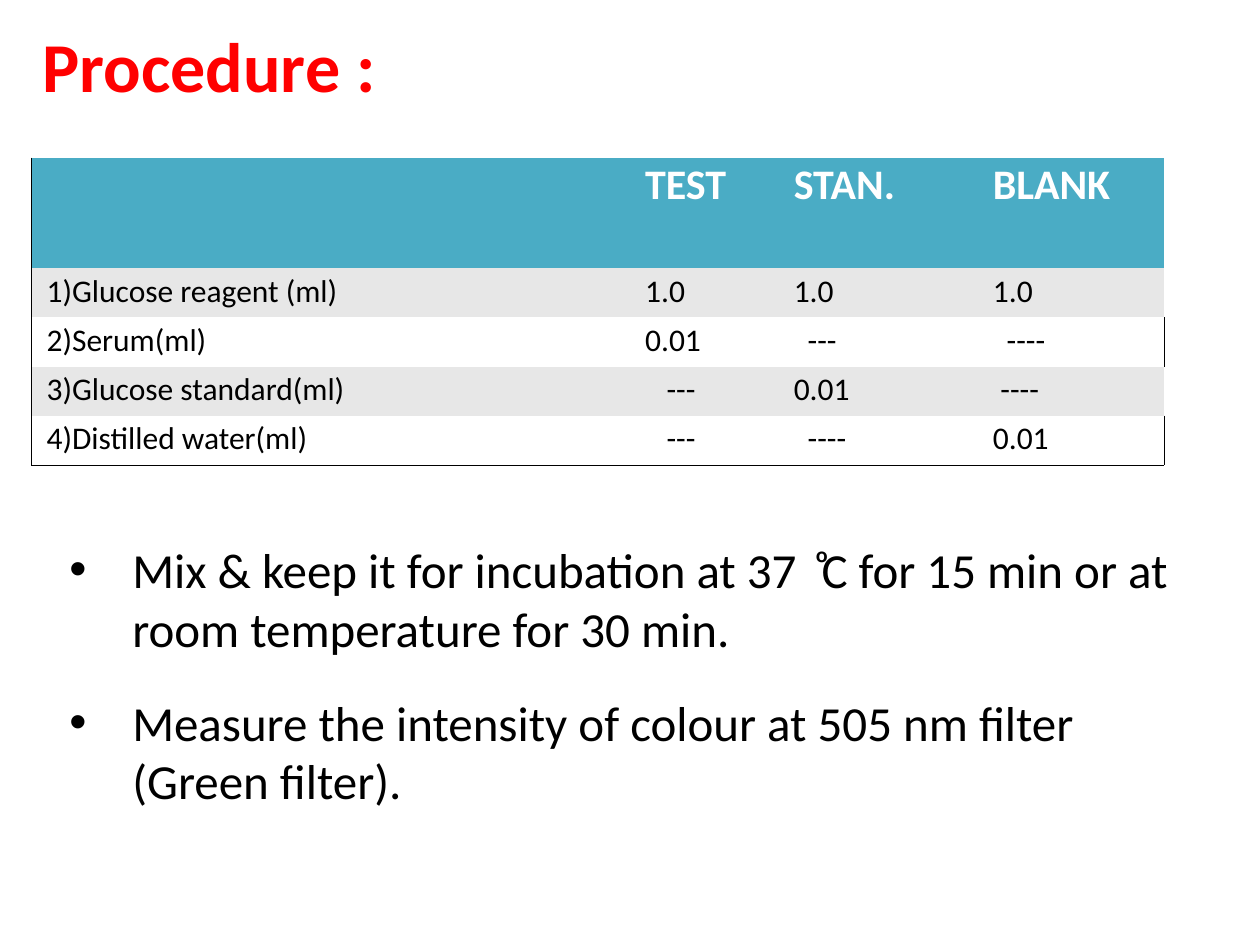
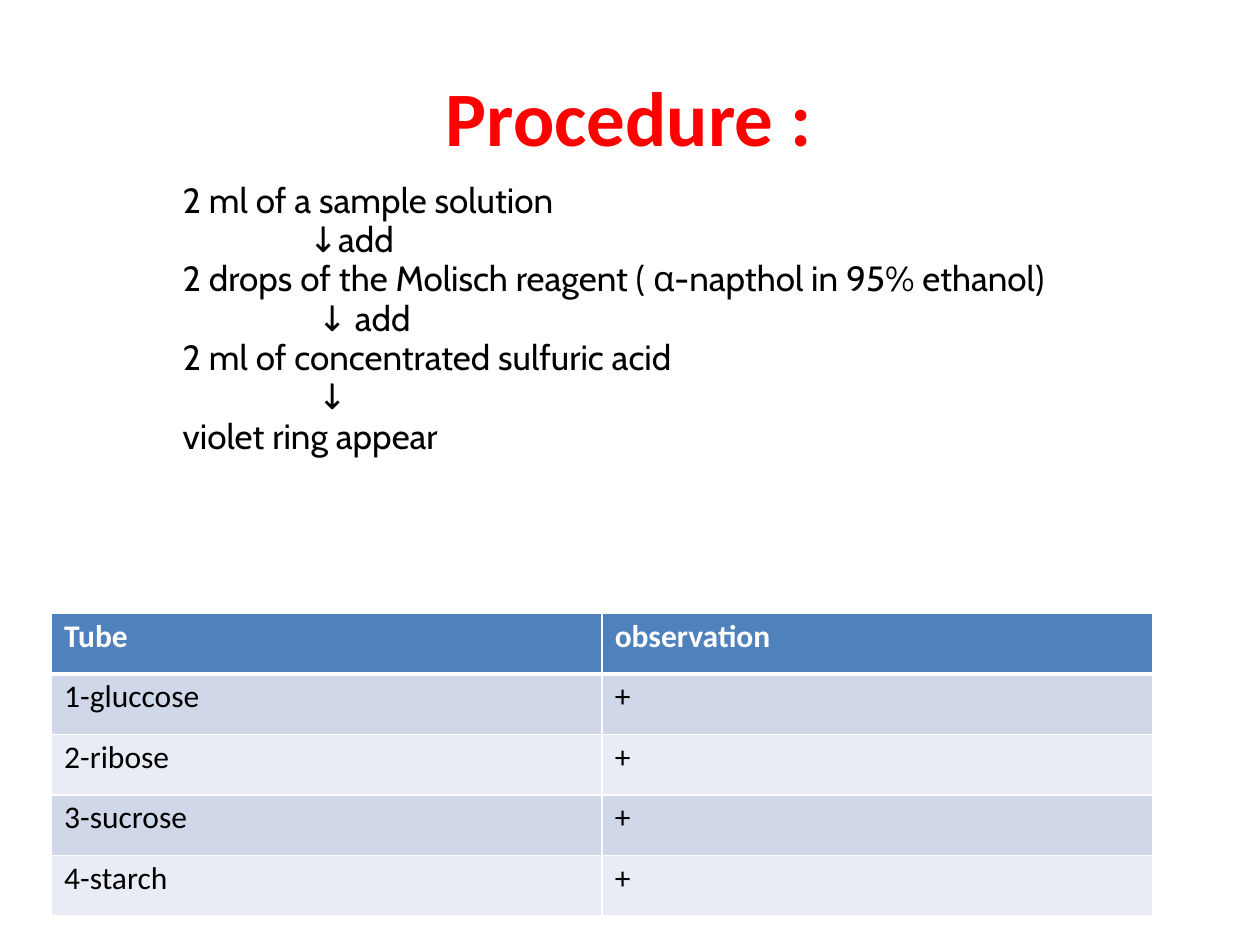
from dataclasses import dataclass
from lxml.etree import SubElement
from pptx import Presentation
from pptx.dml.color import RGBColor
from pptx.oxml.ns import qn
from pptx.util import Inches, Pt


@dataclass(frozen=True)
class Theme:
    font: str = "Calibri"
    steps_font: str = "Cabin"
    title: str = "FF0000"
    text: str = "000000"
    white: str = "FFFFFF"
    teal: str = "4AACC5"
    grey: str = "E7E7E7"
    blue: str = "4F81BC"
    blue_bands: tuple = ("D0D7E8", "E9ECF4")
    incubation_size: int = 28
    steps_size: int = 20
    header_size: int = 24
    cell_size: int = 18
    no_table_style: str = "{2D5ABB26-0587-4C30-8999-92F81FD0307C}"


theme = Theme()


def write(frame, lines, size, color=theme.text, font=theme.font, bold=False,
          top=0.01, hanging=0, tabs=()):
    frame.word_wrap = True
    frame.margin_left = frame.margin_right = frame.margin_bottom = 0
    frame.margin_top = Inches(top)
    for number, (text, indent, before, spacing) in enumerate(lines):
        paragraph = frame.add_paragraph() if number else frame.paragraphs[0]
        paragraph.text = text
        properties = paragraph._p.get_or_add_pPr()
        properties.set("marL", str(Inches(indent)))
        properties.set("indent", str(Inches(-hanging)))
        if hanging:
            SubElement(properties, qn("a:buFont"), typeface="Arial")
            SubElement(properties, qn("a:buChar"), char="•")
        if tabs:
            stops = SubElement(properties, qn("a:tabLst"))
            for stop in tabs:
                SubElement(stops, qn("a:tab"), pos=str(Inches(stop)), algn="l")
        paragraph.space_before = Pt(before)
        if spacing:
            paragraph.line_spacing = Pt(spacing)
        paragraph.font.name = font
        paragraph.font.size = Pt(size)
        paragraph.font.bold = bold
        paragraph.font.color.rgb = RGBColor.from_string(color)


def style_cell(cell, text, indent, before, size, color, bold, top, fill, borders):
    cell.margin_left = cell.margin_right = cell.margin_bottom = 0
    cell.margin_top = Inches(top)
    write(cell.text_frame, [(text, indent, before, None)], size, color, bold=bold, top=top)
    properties = cell._tc.get_or_add_tcPr()
    for side in "LRTB":
        if side in borders:
            line_color, width = borders[side]
            line = SubElement(properties, qn(f"a:ln{side}"), w=str(Pt(width)))
            line_fill = SubElement(line, qn("a:solidFill"))
            SubElement(line_fill, qn("a:srgbClr"), val=line_color)
    if fill:
        cell.fill.solid()
        cell.fill.fore_color.rgb = RGBColor.from_string(fill)
    else:
        cell.fill.background()


deck = Presentation()
deck.slide_width = Inches(10)
deck.slide_height = Inches(7.5)

slides = []
tables = []
pages = [
    ((0.33, 0.17, 2.67, 0.69), 40, (0.25, 1.25), (4.75, 1.18, 1.58, 1.48), (0.88,) + (0.39,) * 4),
    ((3.53, 0.54, 2.93, 0.76), 44, (0.41, 4.87), (4.37, 4.37), (0.48,) * 5),
]
for title_box, title_size, corner, widths, heights in pages:
    slide = deck.slides.add_slide(deck.slide_layouts[6])
    title = slide.shapes.add_textbox(*map(Inches, title_box))
    write(title.text_frame, [("Procedure :", 0.01, 1, None)], title_size, theme.title, bold=True)
    grid = slide.shapes.add_table(
        len(heights), len(widths), *map(Inches, (*corner, sum(widths), sum(heights))))
    grid.element.find(".//" + qn("a:tableStyleId")).text = theme.no_table_style
    for column, width in zip(grid.table.columns, widths):
        column.width = Inches(width)
    for row, height in zip(grid.table.rows, heights):
        row.height = Inches(height)
    slides.append(slide)
    tables.append(grid.table)

glucose_slide, molisch_slide = slides
reagent_table, observation_table = tables

reagents = [
    ("", "TEST", "STAN.", "BLANK"),
    ("1)Glucose reagent (ml)", "1.0", "1.0", "1.0"),
    ("2)Serum(ml)", "0.01", "---", "----"),
    ("3)Glucose standard(ml)", "---", "0.01", "----"),
    ("4)Distilled water(ml)", "---", "----", "0.01"),
]
dash_indents = {(2, 2): 0.23, (2, 3): 0.23, (3, 1): 0.29, (3, 3): 0.18, (4, 1): 0.29, (4, 2): 0.23}
hairline = (theme.text, 0.25)
for r, row in enumerate(reagents):
    header = r == 0
    fill = theme.teal if header else theme.grey if r % 2 else None
    for c, text in enumerate(row):
        borders = {}
        if c == 0:
            borders["L"] = hairline
        if c == len(row) - 1 and not fill:
            borders["R"] = hairline
        if r == len(reagents) - 1:
            borders["B"] = hairline
        style_cell(
            reagent_table.cell(r, c), text, dash_indents.get((r, c), 0.12),
            1.6 if header else 2.1, theme.header_size if header else theme.cell_size,
            theme.white if header else theme.text, header,
            0.02 if header else 0.03, fill, borders)

incubation = glucose_slide.shapes.add_textbox(*map(Inches, (0.54, 4.27, 8.75, 2.17)))
write(incubation.text_frame, [
    ("Mix & keep it for incubation at 37\tͦC for 15 min or at room temperature for 30 min.",
     0.51, 0.9, None),
    ("Measure the intensity of colour at 505 nm filter (Green filter).", 0.51, 20.1, None),
], theme.incubation_size, hanging=0.5, tabs=(0.51, 5.98))

steps = molisch_slide.shapes.add_textbox(*map(Inches, (1.44, 1.42, 7.18, 2.22)))
write(steps.text_frame, [
    ("2 ml of a sample solution", 0.01, 1.1, 23.1),
    ("↓add", 1.01, 0, 22.4),
    ("2 drops of the Molisch reagent ( α-napthol in 95% ethanol)", 0.01, 0, 22.4),
    ("↓ add", 1.08, 0, 22.3),
    ("2 ml of concentrated sulfuric acid", 0.01, 0, 22.3),
    ("↓", 1.08, 0, 22.3),
    ("violet ring appear", 0.01, 0, 23.1),
], theme.steps_size, font=theme.steps_font)

observations = [("Tube", "observation")] + [
    (tube, "+") for tube in ("1-gluccose", "2-ribose", "3-sucrose", "4-starch")]
for r, row in enumerate(observations):
    header = r == 0
    fill = theme.blue if header else theme.blue_bands[(r - 1) % 2]
    borders = {side: (theme.white, 1) for side in "LRTB"}
    if r < 2:
        borders["B" if header else "T"] = (theme.white, 3)
    for c, text in enumerate(row):
        style_cell(
            observation_table.cell(r, c), text, 0.1, 2.5, theme.cell_size,
            theme.white if header else theme.text, header, 0.03, fill, borders)

deck.save("out.pptx")
